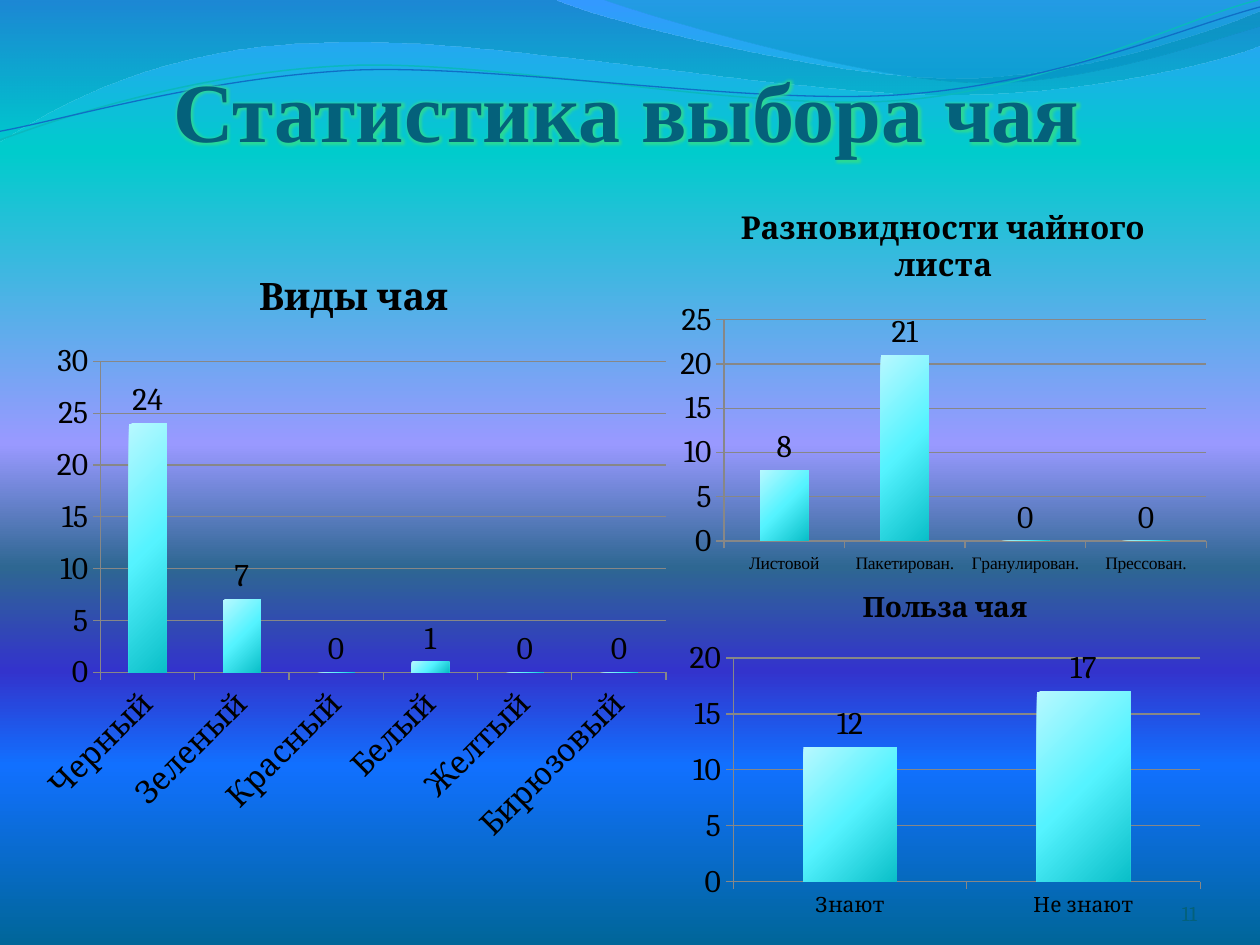
from lxml import etree
from pptx import Presentation
from pptx.chart.data import CategoryChartData
from pptx.dml.color import RGBColor
from pptx.enum.chart import XL_CHART_TYPE as CT, XL_LABEL_POSITION as LP, XL_TICK_MARK as TM
from pptx.enum.text import MSO_ANCHOR, PP_ALIGN
from pptx.oxml.ns import qn
from pptx.util import Pt

COLORS = {
    "text": "000000", "title": "04617B", "glow": "33DD88", "grid": "878787",
    "teal": "0AB8BF", "blue": "0F6FC6",
}
SKY = [(0, "3399FF"), (16, "00CCCC"), (47, "9999FF"), (60, "2E6792"),
       (71, "3333CC"), (81, "1170FF"), (100, "006699")]
BAR = [(0, "B8F8FF"), (50, "55F3FF"), (100, "0ABFC8")]
# Gradient stops with a third value have an opacity in percent.
WAVE_LEFT = [(0, "0074A1", 45), (100, "00C6CF", 55)]
WAVE_RIGHT = [(0, "00A1A9", 30), (80, "008BBF", 45)]


def rgb(name):
    return RGBColor.from_string(COLORS[name])


def color_xml(parent, value, opacity=100):
    clr = etree.SubElement(parent, qn("a:srgbClr"), val=value)
    if opacity < 100:
        etree.SubElement(clr, qn("a:alpha"), val=str(opacity * 1000))


def set_gradient(fill, element, stops, angle):
    """Fill with any number of stops; angle is clockwise in degrees."""
    fill.gradient()
    fill.gradient_angle = 360 - angle
    gs_list = element.find(".//" + qn("a:gsLst"))
    for gs in list(gs_list):
        gs_list.remove(gs)
    for pos, *color in stops:
        gs = etree.SubElement(gs_list, qn("a:gs"), pos=str(pos * 1000))
        color_xml(gs, *color)


class SlideBuilder:
    font = "Cambria"
    title_font = "Times New Roman"

    def __init__(self, s):
        self.s = s

    def background(self, stops):
        set_gradient(self.s.background.fill, self.s.element, stops, 90)

    def outline(self, start, segments, closed):
        """Segments are (x, y) for a line or six numbers for a Bezier curve."""
        builder = self.s.shapes.build_freeform(*(Pt(v) for v in start), scale=1.0)
        for seg in segments:
            pts = [(Pt(x), Pt(y)) for x, y in zip(seg[::2], seg[1::2])]
            builder.add_line_segments(pts, close=False)
        if closed:
            builder.add_line_segments([], close=True)
        sp = builder.convert_to_shape()
        sp.shadow.inherit = False
        lines = iter(sp.element.findall(".//" + qn("a:lnTo")))
        for seg in segments:
            first = next(lines)
            if len(seg) == 6:
                first.tag = qn("a:cubicBezTo")
                for _ in range(2):
                    extra = next(lines)
                    first.append(extra[0])
                    extra.getparent().remove(extra)
        return sp

    def wave(self, start, segments, stops):
        sp = self.outline(start, segments, True)
        set_gradient(sp.fill, sp.element, stops, 90)
        sp.line.fill.background()

    def curve(self, start, segments, color, width):
        sp = self.outline(start, segments, False)
        sp.fill.background()
        sp.line.color.rgb = rgb(color)
        sp.line.width = Pt(width)

    def title(self, text, x, y, w, h):
        sp = self.s.shapes.title
        sp.element.getparent().append(sp.element)  # in front of the waves
        sp.left, sp.top, sp.width, sp.height = Pt(x), Pt(y), Pt(w), Pt(h)
        tf = sp.text_frame
        tf.vertical_anchor = MSO_ANCHOR.BOTTOM
        tf.margin_left = tf.margin_right = tf.margin_bottom = 0
        p = tf.paragraphs[0]
        p.alignment = PP_ALIGN.CENTER
        r = p.add_run()
        r.text = text
        r.font.name, r.font.size, r.font.bold = self.title_font, Pt(48), True
        r.font.color.rgb = rgb("title")
        effects = etree.Element(qn("a:effectLst"))
        glow = etree.SubElement(effects, qn("a:glow"), rad=str(Pt(5)))
        color_xml(glow, COLORS["glow"], 80)
        r._r.rPr.find(qn("a:solidFill")).addnext(effects)

    def page_number(self, text, x, y, w, h):
        tf = self.s.shapes.add_textbox(Pt(x), Pt(y), Pt(w), Pt(h)).text_frame
        tf.word_wrap = True
        tf.margin_left = tf.margin_right = tf.margin_top = tf.margin_bottom = 0
        tf.vertical_anchor = MSO_ANCHOR.MIDDLE
        p = tf.paragraphs[0]
        p.text, p.alignment = text, PP_ALIGN.RIGHT
        p.font.name, p.font.size = self.font, Pt(12)
        p.font.color.rgb = rgb("title")

    def style_font(self, font, size, name=None):
        font.name, font.size = name or self.font, Pt(size)
        font.color.rgb = rgb("text")

    def style_axis(self, axis, size, name=None):
        axis.major_tick_mark, axis.minor_tick_mark = TM.OUTSIDE, TM.NONE
        axis.format.line.color.rgb = rgb("grid")
        axis.format.line.width = Pt(0.75)
        self.style_font(axis.tick_labels.font, size, name)

    def column_chart(self, title, values, box, top, title_size, cat_size,
                     cat_font=None):
        data = CategoryChartData()
        data.categories = list(values)
        data.add_series("Series 1", list(values.values()))
        chart = self.s.shapes.add_chart(
            CT.COLUMN_CLUSTERED, *(Pt(v) for v in box), data).chart
        self.style_font(chart.font, 18)
        chart.has_legend = False
        chart.has_title = True
        p = chart.chart_title.text_frame.paragraphs[0]
        p.text = title
        self.style_font(p.font, title_size)
        p.font.bold = True

        self.style_axis(chart.category_axis, cat_size, cat_font)
        axis = chart.value_axis
        self.style_axis(axis, 18)
        axis.minimum_scale, axis.maximum_scale, axis.major_unit = 0, top, 5
        axis.major_gridlines.format.line.color.rgb = rgb("grid")
        axis.major_gridlines.format.line.width = Pt(0.75)

        bars = chart.plots[0]
        bars.gap_width, bars.vary_by_categories = 150, False
        bars.has_data_labels = True
        bars.data_labels.show_value = True
        bars.data_labels.position = LP.OUTSIDE_END
        self.style_font(bars.data_labels.font, 18)
        series = bars.series[0]
        set_gradient(series.format.fill, series._element, BAR, 45)


prs = Presentation()
prs.slide_width, prs.slide_height = Pt(720), Pt(540)
b = SlideBuilder(prs.slides.add_slide(prs.slide_layouts[5]))
b.background(SKY)
b.wave((0, 0), [(317, 0), (343, 12, 478, 45, 546, 45), (614, 45, 690, 19, 720, 6.5),
                (720, 26), (708, 32, 626, 55, 537, 54), (448, 54, 275, 20, 185, 24.5),
                (93, 26, 33, 60, 0, 81)], WAVE_LEFT)
b.wave((345, 0), [(366, 8, 491, 45, 554, 47), (616, 50, 692, 23, 720, 15), (720, 0)],
       WAVE_RIGHT)
b.curve((0, 80), [(35, 67, 114, 41, 199, 37.5), (284, 34, 427, 64, 513, 57.5),
                  (600, 51, 675, 11, 719, 0)], "teal", 0.85)
b.curve((0, 75), [(34, 69, 118, 44, 204, 40), (290, 37, 430, 60.5, 516, 54),
                  (602, 48, 678, 15, 720, 4)], "blue", 0.75)
b.title("Статистика выбора чая", 34, 22.5, 648, 68.5)
b.column_chart(
    "Виды чая",
    {"Черный": 24, "Зеленый": 7, "Красный": 0, "Белый": 1, "Желтый": 0, "Бирюзовый": 0},
    (16.5, 140.5, 371.5, 348.5), 30, 21.6, 18)
b.column_chart(
    "Разновидности чайного листа",
    {"Листовой": 8, "Пакетирован.": 21, "Гранулирован.": 0, "Прессован.": 0},
    (382.5, 106.5, 313, 225.5), 25, 18, 10, b.title_font)
b.column_chart(
    "Польза чая", {"Знают": 12, "Не знают": 17},
    (388, 326, 304, 202.5), 20, 16, 12)
b.page_number("11", 624, 512, 60, 20)
prs.save("out.pptx")
